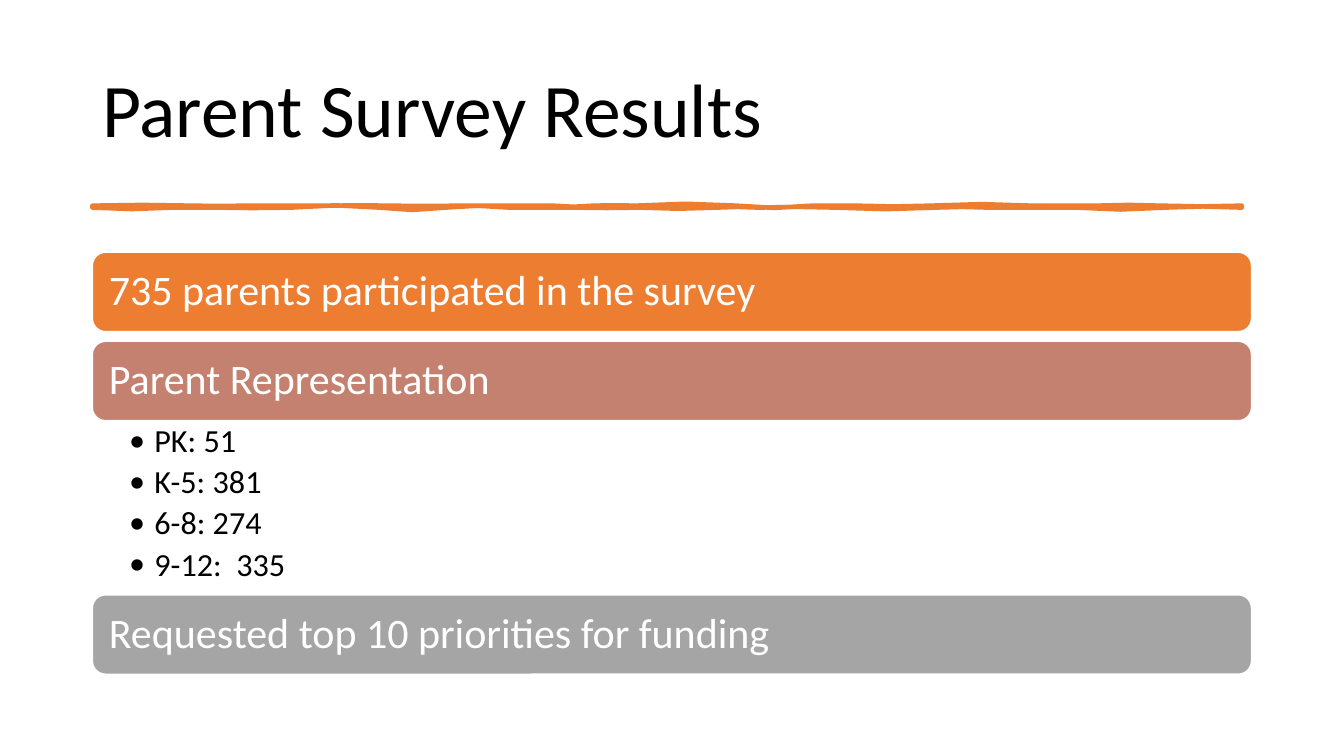
import dataclasses
import typing

import lxml.etree
import pptx
import pptx.dml.color
import pptx.enum.shapes
import pptx.enum.text
import pptx.oxml.ns
import pptx.util

Pt = pptx.util.Pt
RGB = pptx.dml.color.RGBColor
MSO_ANCHOR = pptx.enum.text.MSO_ANCHOR


@dataclasses.dataclass(frozen=True)
class Theme:
    font: str = "Calibri"
    black: str = "000000"
    white: str = "FFFFFF"
    orange: str = "ED7D31"
    rose: str = "C48170"
    grey: str = "A5A5A5"
    title_size: float = 54
    bar_size: float = 30
    bullet_size: float = 23


class Box(typing.NamedTuple):
    left: float
    top: float
    width: float
    height: float


class Wave(typing.NamedTuple):
    x: float
    bend_in: float
    bend_out: float


@dataclasses.dataclass(frozen=True)
class Section:
    heading: str
    color: str
    bullets: tuple[str, ...] = ()


THEME = Theme()
LEFT, WIDTH = 66, 828
BAR_TOP, BAR_HEIGHT, BAR_GAP, BULLETS_HEIGHT = 180.2, 56.7, 6.9, 124.4
STEPS = 2

SECTIONS = (
    Section("735 parents participated in the survey", THEME.orange),
    Section("Parent Representation", THEME.rose,
            ("PK: 51", "K-5: 381", "6-8: 274", "9-12:  335")),
    Section("Requested top 10 priorities for funding", THEME.grey),
)

UPPER_EDGE = (
    Wave(66, 0, 0), Wave(137, 0, -1.4), Wave(176, 1.4, -0.7),
    Wave(238, 0.7, -0.7), Wave(276, 0.7, -1.4), Wave(331, 1.4, -0.7),
    Wave(395, 0.7, -0.7), Wave(424, 0.7, 1.4), Wave(454, -1.4, 0.7),
    Wave(526, -0.7, -2.9), Wave(580, 2.9, 1.4), Wave(611, -1.4, 1.4),
    Wave(665, -1.4, 2.9), Wave(737, -2.9, 0), Wave(783, 0, 0),
    Wave(829, 0, -1.4), Wave(887, 1.4, 0),
)
LOWER_EDGE = (
    Wave(887, 0, 0), Wave(832, 0, -2.2), Wave(769, 2.2, 1.4),
    Wave(706, -1.4, 1.4), Wave(668, -1.4, 0), Wave(597, 0, 2.9),
    Wave(542, -2.9, 1.4), Wave(512, -1.4, 0), Wave(457, 1.4, 0.7),
    Wave(410, -0.7, 1.4), Wave(364, -1.4, 1.4), Wave(318, -1.4, -2.2),
    Wave(271, 2.2, 2.2), Wave(208, -2.2, -2.2), Wave(153, 2.2, -1.4),
    Wave(123, 1.4, -1.4), Wave(66, 1.4, 1.4),
)


def set_format(target: typing.Any, values: dict[str, typing.Any]) -> None:
    for name, value in values.items():
        setattr(target, name, value)


def set_frame(tf: typing.Any, anchor: typing.Any, left: float, top: float,
              right: float, bottom: float) -> None:
    set_format(tf, {
        "word_wrap": True, "vertical_anchor": anchor,
        "margin_left": Pt(left), "margin_top": Pt(top),
        "margin_right": Pt(right), "margin_bottom": Pt(bottom),
    })


def write(p: typing.Any, text: str, size: float, color: str) -> None:
    set_format(p, {"line_spacing": 0.9,
                   "alignment": pptx.enum.text.PP_ALIGN.LEFT})
    r = p.add_run()
    r.text = text
    set_format(r.font, {"name": THEME.font, "size": Pt(size)})
    r.font.color.rgb = RGB.from_string(color)


def paint(sp: typing.Any, fill: str, line: str, width: float) -> None:
    sp.shadow.inherit = False
    sp.fill.solid()
    sp.fill.fore_color.rgb = RGB.from_string(fill)
    sp.line.color.rgb = RGB.from_string(line)
    sp.line.width = Pt(width)


def add_text_box(s: typing.Any, box: Box) -> typing.Any:
    return s.shapes.add_textbox(*(Pt(v) for v in box)).text_frame


def add_title(s: typing.Any, text: str) -> None:
    tf = add_text_box(s, Box(LEFT, 28.8, WIDTH, 104.4))
    set_frame(tf, MSO_ANCHOR.MIDDLE, 7.2, 3.6, 7.2, 3.6)
    write(tf.paragraphs[0], text, THEME.title_size, THEME.black)


def edge_points(edge: tuple[Wave, ...], base: float) -> list[tuple[int, int]]:
    points = [(Pt(edge[0].x), Pt(base))]
    for start, end in zip(edge, edge[1:]):
        for step in range(1, STEPS + 1):
            t = step / STEPS
            x = start.x + (end.x - start.x) * t
            bend = 3 * t * (1 - t) * ((1 - t) * end.bend_in + t * end.bend_out)
            points.append((Pt(x), Pt(base + bend)))
    return points


def add_brush_line(s: typing.Any) -> None:
    points = edge_points(UPPER_EDGE, 146.9) + edge_points(LOWER_EDGE, 148.3)
    builder = s.shapes.build_freeform(*points[0], scale=1.0)
    builder.add_line_segments(points[1:], close=True)
    paint(builder.convert_to_shape(), THEME.orange, THEME.orange, 3.25)


def add_bar(s: typing.Any, section: Section, top: float) -> None:
    box = Box(LEFT, top, WIDTH, BAR_HEIGHT)
    sp = s.shapes.add_shape(pptx.enum.shapes.MSO_SHAPE.ROUNDED_RECTANGLE,
                            *(Pt(v) for v in box))
    paint(sp, section.color, THEME.white, 1)
    set_frame(sp.text_frame, MSO_ANCHOR.MIDDLE, 9.1, 8.6, 8.6, 8.6)
    write(sp.text_frame.paragraphs[0], section.heading,
          THEME.bar_size, THEME.white)


def add_bullets(s: typing.Any, bullets: tuple[str, ...], top: float) -> None:
    tf = add_text_box(s, Box(LEFT, top, WIDTH, BULLETS_HEIGHT))
    set_frame(tf, MSO_ANCHOR.TOP, 26.3, 2.9, 16.6, 2.9)
    for i, text in enumerate(bullets):
        p = tf.add_paragraph() if i else tf.paragraphs[0]
        pPr = p._p.get_or_add_pPr()
        pPr.set("marL", str(Pt(18)))
        pPr.set("indent", str(Pt(-18)))
        for tag, key, value in (("a:buFont", "typeface", THEME.font),
                                ("a:buChar", "char", "•")):
            bullet = lxml.etree.SubElement(pPr, pptx.oxml.ns.qn(tag))
            bullet.set(key, value)
        p.space_after = Pt(4.6)
        write(p, text, THEME.bullet_size, THEME.black)


def main() -> None:
    prs = pptx.Presentation()
    set_format(prs, {"slide_width": Pt(960), "slide_height": Pt(540)})
    s = prs.slides.add_slide(prs.slide_layouts[6])
    add_title(s, "Parent Survey Results")
    add_brush_line(s)
    top = BAR_TOP
    for section in SECTIONS:
        add_bar(s, section, top)
        top += BAR_HEIGHT
        if section.bullets:
            add_bullets(s, section.bullets, top)
            top += BULLETS_HEIGHT
        else:
            top += BAR_GAP
    prs.save("out.pptx")


if __name__ == "__main__":
    main()
